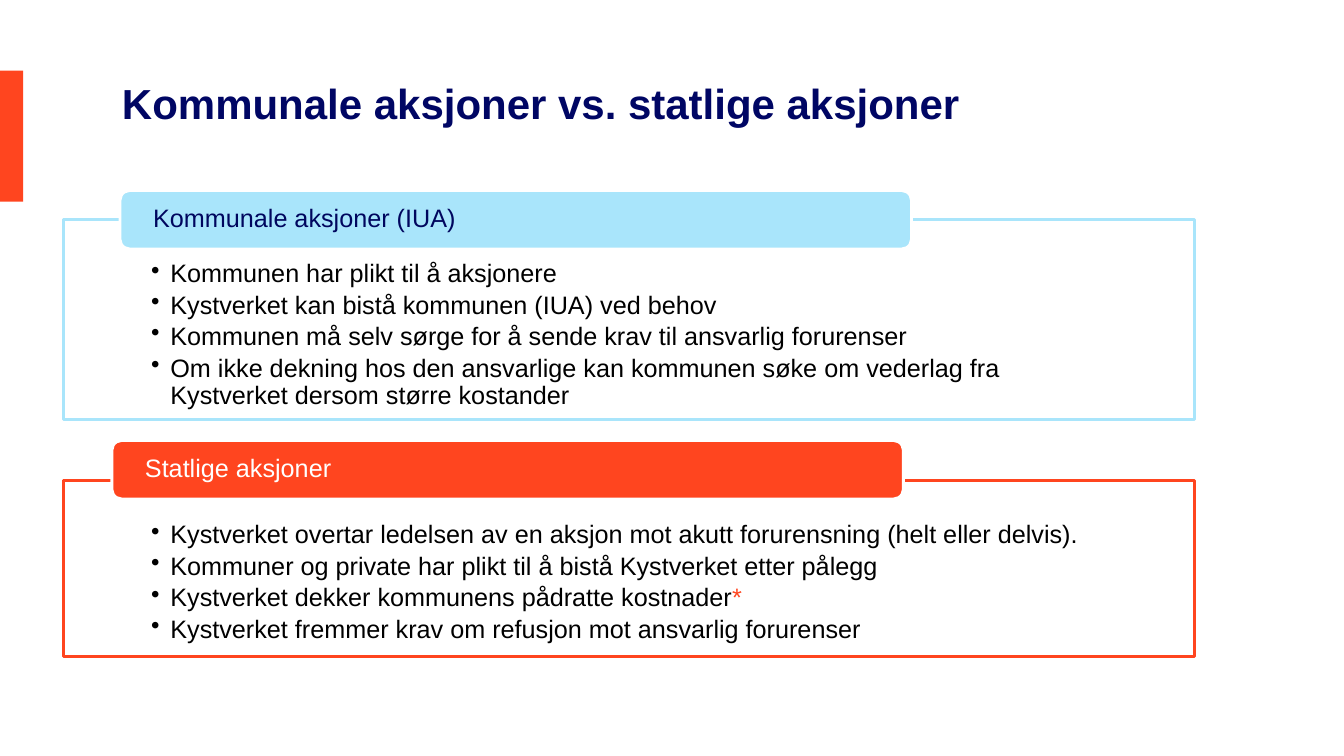
import dataclasses

import lxml.etree
import pptx
import pptx.dml.color
import pptx.enum.shapes
import pptx.enum.text
import pptx.oxml.ns
import pptx.util

EMU_PER_PX = 9144
FONT = "Arial"
ORANGE, SKY, NAVY, WHITE, BLACK = "FF451F", "A9E5FB", "000664", "FFFFFF", "000000"
SHAPES = pptx.enum.shapes.MSO_SHAPE
MIDDLE = pptx.enum.text.MSO_ANCHOR.MIDDLE
TOP = pptx.enum.text.MSO_ANCHOR.TOP
LEFT = pptx.enum.text.PP_ALIGN.LEFT


@dataclasses.dataclass(frozen=True)
class Run:
    text: str
    color: str = BLACK


@dataclasses.dataclass(frozen=True)
class Section:
    heading: Run
    color: str
    frame_top: int
    frame_height: int
    tab_left: int
    tab_top: int
    points: list[list[Run]]


SECTIONS = [
    Section(Run("Kommunale aksjoner (IUA)", "00065E"), SKY, 218, 198, 119, 189, [
        [Run("Kommunen har plikt til å aksjonere")],
        [Run("Kystverket kan bistå kommunen (IUA) ved behov")],
        [Run("Kommunen må selv sørge for å sende krav til ansvarlig forurenser")],
        [Run("Om ikke dekning hos den ansvarlige kan kommunen søke om vederlag fra "
             "Kystverket dersom større kostander")],
    ]),
    Section(Run("Statlige aksjoner", WHITE), ORANGE, 477, 174, 111, 437, [
        [Run("Kystverket overtar ledelsen av en aksjon mot akutt forurensning "
             "(helt eller delvis).")],
        [Run("Kommuner og private har plikt til å bistå Kystverket etter pålegg")],
        [Run("Kystverket dekker kommunens pådratte kostnader"), Run("*", ORANGE)],
        [Run("Kystverket fremmer krav om refusjon mot ansvarlig forurenser")],
    ]),
]


def px(length: int) -> pptx.util.Emu:
    return pptx.util.Emu(length * EMU_PER_PX)


def rgb(color: str) -> pptx.dml.color.RGBColor:
    return pptx.dml.color.RGBColor.from_string(color)


def add_box(slide, kind, left: int, top: int, width: int, height: int,
            fill: str, line: str | None = None):
    box = slide.shapes.add_shape(kind, px(left), px(top), px(width), px(height))
    box.shadow.inherit = False
    box.fill.solid()
    box.fill.fore_color.rgb = rgb(fill)
    if line:
        box.line.color.rgb = rgb(line)
        box.line.width = pptx.util.Pt(2)
    else:
        box.line.fill.background()
    return box


def set_opacity(box, percent: int) -> None:
    color = box.fill._xPr.find(".//" + pptx.oxml.ns.qn("a:srgbClr"))
    alpha = lxml.etree.SubElement(color, pptx.oxml.ns.qn("a:alpha"))
    alpha.set("val", str(percent * 1000))


def set_frame(frame, anchor, left: int, top: int, right: int, bottom: int) -> None:
    frame.word_wrap = True
    frame.vertical_anchor = anchor
    frame.margin_left, frame.margin_top = px(left), px(top)
    frame.margin_right, frame.margin_bottom = px(right), px(bottom)


def write(paragraph, runs: list[Run], size: int, bold: bool = False) -> None:
    paragraph.alignment = LEFT
    for part in runs:
        run = paragraph.add_run()
        run.text = part.text
        run.font.name = FONT
        run.font.size = pptx.util.Pt(size)
        run.font.bold = bold
        run.font.color.rgb = rgb(part.color)


def add_bullet(paragraph, indent: int) -> None:
    properties = paragraph._p.get_or_add_pPr()
    properties.set("marL", str(px(indent)))
    properties.set("indent", str(px(-indent)))
    bullet = lxml.etree.SubElement(properties, pptx.oxml.ns.qn("a:buChar"))
    bullet.set("char", "•")


def add_section(slide, section: Section) -> None:
    panel = add_box(slide, SHAPES.RECTANGLE, 63, section.frame_top, 1122,
                    section.frame_height, WHITE, section.color)
    set_opacity(panel, 90)
    set_frame(panel.text_frame, TOP, 87, 41, 87, 14)
    for index, runs in enumerate(section.points):
        frame = panel.text_frame
        paragraph = frame.add_paragraph() if index else frame.paragraphs[0]
        add_bullet(paragraph, 19)
        paragraph.level = 1
        paragraph.line_spacing = 0.9
        paragraph.space_after = pptx.util.Pt(3)
        write(paragraph, runs, 18)

    tab = add_box(slide, SHAPES.ROUNDED_RECTANGLE, section.tab_left, section.tab_top,
                  785, 58, section.color, WHITE)
    set_frame(tab.text_frame, MIDDLE, 30, 0, 30, 0)
    heading = tab.text_frame.paragraphs[0]
    heading.line_spacing = 0.9
    write(heading, [section.heading], 18)


def main() -> None:
    presentation = pptx.Presentation()
    presentation.slide_width, presentation.slide_height = px(1333), px(750)
    slide = presentation.slides.add_slide(presentation.slide_layouts[5])

    title = slide.shapes.title
    title.left, title.top, title.width, title.height = px(111), px(36), px(984), px(132)
    set_frame(title.text_frame, MIDDLE, 10, 5, 10, 5)
    write(title.text_frame.paragraphs[0],
          [Run("Kommunale aksjoner vs. statlige aksjoner", NAVY)], 30, bold=True)

    add_box(slide, SHAPES.RECTANGLE, 0, 70, 23, 130, ORANGE)
    for section in SECTIONS:
        add_section(slide, section)
    presentation.save("out.pptx")


if __name__ == "__main__":
    main()
